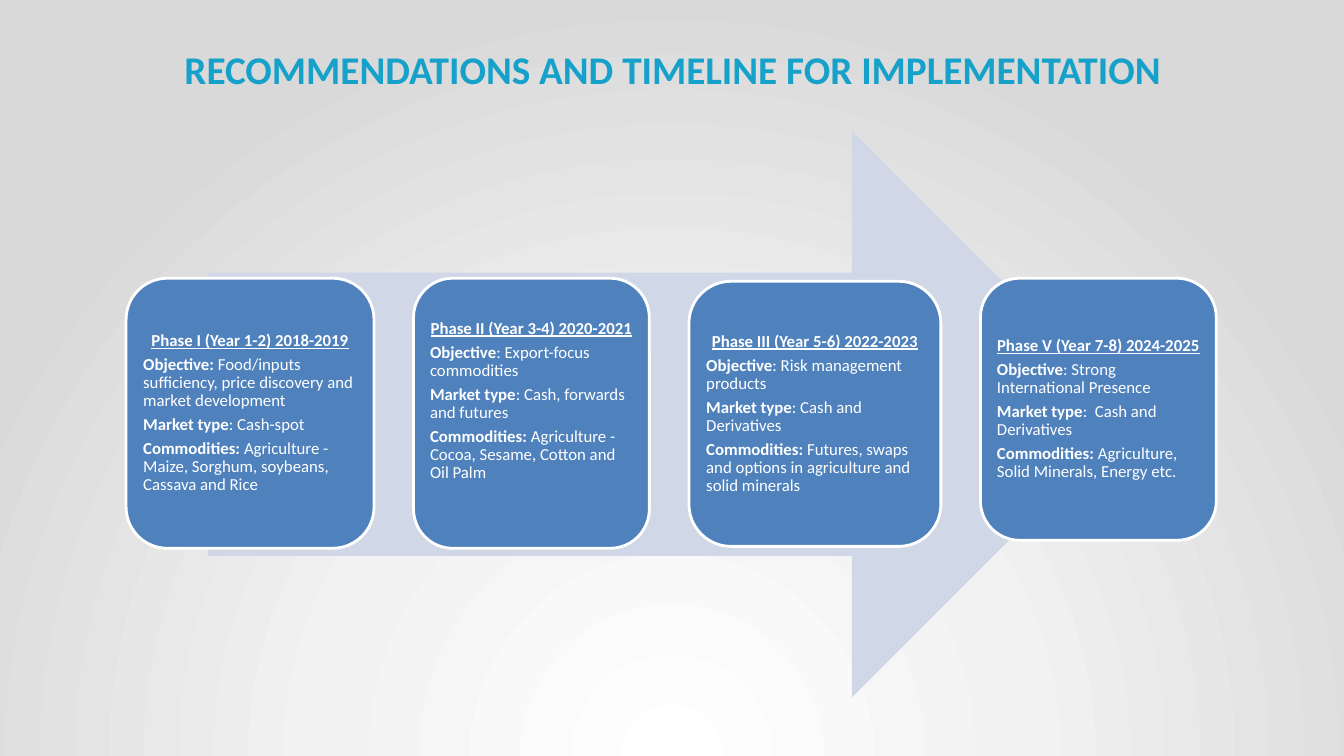
from pptx import Presentation
from pptx import util as u
from pptx.dml.color import RGBColor
from pptx.enum import shapes, text
from pptx.oxml import parse_xml

TITLE_BLUE = RGBColor(0x16, 0xA1, 0xCA)
ARROW_BLUE = RGBColor(0xD0, 0xD8, 0xE8)
CARD_BLUE = RGBColor(0x4F, 0x81, 0xBD)
WHITE = RGBColor(0xFF, 0xFF, 0xFF)
BACKGROUND_STOPS = [(0, RGBColor(0xFF, 0xFF, 0xFF)), (46, RGBColor(0xF2, 0xF2, 0xF2)), (100, RGBColor(0xD9, 0xD9, 0xD9))]

FIRST_LEFT = 9.38
GAP = 2.94
PHASES = [
    (18.45, 36.8, 35.73, 0.05, "Phase I (Year 1-2) 2018-2019", [
        ("Objective: ", "Food/inputs sufficiency, price discovery and market development"),
        ("Market type", ": Cash-spot"),
        ("Commodities: ", "Agriculture - Maize, Sorghum, soybeans, Cassava and Rice")]),
    (17.55, 36.8, 35.73, 0.29, "Phase II (Year 3-4) 2020-2021", [
        ("Objective", ": Export-focus commodities"),
        ("Market type", ": Cash, forwards and futures"),
        ("Commodities: ", "Agriculture - Cocoa, Sesame, Cotton and Oil Palm")]),
    (18.75, 37.2, 35.07, 0.05, "Phase III (Year 5-6) 2022-2023", [
        ("Objective", ": Risk management products"),
        ("Market type", ": Cash and Derivatives"),
        ("Commodities: ", "Futures, swaps and options in agriculture and solid minerals")]),
    (17.55, 36.8, 34.67, 0.05, "Phase V (Year 7-8) 2024-2025", [
        ("Objective", ": Strong International Presence"),
        ("Market type", ":  Cash and Derivatives"),
        ("Commodities: ", "Agriculture, Solid Minerals, Energy etc.")]),
]


class TimelineSlide:
    font = "Calibri"
    body_size = 12
    title_size = 28

    def __init__(self, presentation):
        self.width = presentation.slide_width
        self.height = presentation.slide_height
        self.slide = presentation.slides.add_slide(presentation.slide_layouts[6])

    def box(self, left, top, width, height):
        return [round(share * side / 100) for share, side in
                zip((left, top, width, height), (self.width, self.height) * 2)]

    def background(self, stops):
        gradient = "".join(
            f'<a:gs pos="{share * 1000}"><a:srgbClr val="{color}"/></a:gs>' for share, color in stops)
        self.slide.element.cSld.insert(0, parse_xml(
            '<p:bg xmlns:p="http://schemas.openxmlformats.org/presentationml/2006/main"'
            ' xmlns:a="http://schemas.openxmlformats.org/drawingml/2006/main"><p:bgPr>'
            f'<a:gradFill rotWithShape="1"><a:gsLst>{gradient}</a:gsLst><a:path path="circle">'
            '<a:fillToRect l="50000" t="130000" r="50000" b="-30000"/></a:path></a:gradFill>'
            '<a:effectLst/></p:bgPr></p:bg>'))

    def paragraph(self, paragraph, runs, size, color, centered=False, space_after=0):
        paragraph.alignment = text.PP_ALIGN.CENTER if centered else text.PP_ALIGN.LEFT
        paragraph.line_spacing = 0.9
        paragraph.space_after = u.Pt(space_after)
        for words, bold, underline in runs:
            run = paragraph.add_run()
            run.text = words
            run.font.name = self.font
            run.font.size = u.Pt(size)
            run.font.bold = bold
            run.font.underline = underline
            run.font.color.rgb = color

    def title(self, words, *place):
        frame = self.slide.shapes.add_textbox(*self.box(*place)).text_frame
        frame.word_wrap = True
        frame.vertical_anchor = text.MSO_ANCHOR.MIDDLE
        self.paragraph(frame.paragraphs[0], [(words, True, False)], self.title_size, TITLE_BLUE, True)

    def shape(self, kind, fill, *place):
        shape = self.slide.shapes.add_shape(kind, *self.box(*place))
        shape.shadow.inherit = False
        shape.fill.solid()
        shape.fill.fore_color.rgb = fill
        shape.line.fill.background()
        return shape

    def arrow(self, *place):
        self.shape(shapes.MSO_SHAPE.RIGHT_ARROW, ARROW_BLUE, *place)

    def card(self, heading, entries, bottom_inset, *place):
        card = self.shape(shapes.MSO_SHAPE.ROUNDED_RECTANGLE, CARD_BLUE, *place)
        card.line.color.rgb = WHITE
        card.line.width = u.Pt(2)
        frame = card.text_frame
        frame.word_wrap = True
        frame.vertical_anchor = text.MSO_ANCHOR.MIDDLE
        frame.margin_left = frame.margin_right = frame.margin_top = u.Inches(0.05)
        frame.margin_bottom = u.Inches(bottom_inset)
        self.paragraph(frame.paragraphs[0], [(heading, True, True)], self.body_size, WHITE, True, 4.1)
        for label, detail in entries:
            self.paragraph(frame.add_paragraph(), [(label, True, False), (detail, False, False)],
                           self.body_size, WHITE, space_after=4.1)


def main():
    presentation = Presentation()
    presentation.slide_width = u.Inches(13.33)
    presentation.slide_height = u.Inches(7.5)
    timeline = TimelineSlide(presentation)
    timeline.background(BACKGROUND_STOPS)
    timeline.title("RECOMMENDATIONS AND TIMELINE FOR IMPLEMENTATION", 6.9, 1.87, 86.27, 15.33)
    timeline.arrow(15.45, 17.33, 69.02, 74.93)
    left = FIRST_LEFT
    for width, top, height, bottom_inset, heading, entries in PHASES:
        timeline.card(heading, entries, bottom_inset, left, top, width, height)
        left += width + GAP
    presentation.save("out.pptx")


if __name__ == "__main__":
    main()
